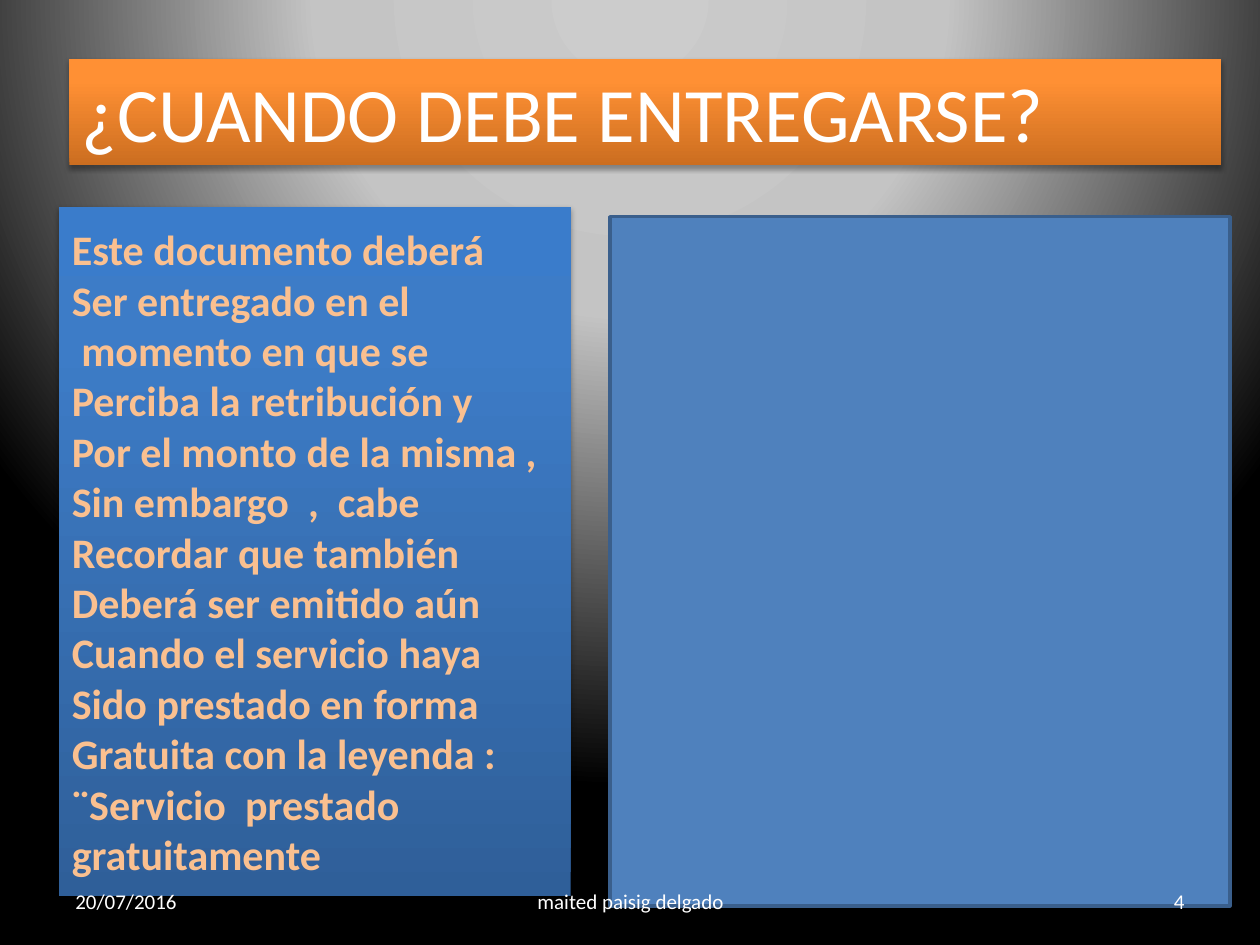
from dataclasses import dataclass

from lxml.etree import SubElement
from pptx import Presentation
from pptx.dml.color import RGBColor
from pptx.enum.shapes import MSO_SHAPE
from pptx.enum.text import MSO_ANCHOR, MSO_AUTO_SIZE, PP_ALIGN
from pptx.oxml.ns import qn
from pptx.util import Inches, Pt

WHITE = RGBColor(0xFF, 0xFF, 0xFF)
BLACK = RGBColor(0x00, 0x00, 0x00)
PEACH = RGBColor(0xFA, 0xC0, 0x90)
PANEL_BLUE = RGBColor(0x4F, 0x81, 0xBD)
PANEL_EDGE = RGBColor(0x3A, 0x5F, 0x8C)

Stops = list[tuple[int, RGBColor]]
BACKDROP: Stops = [(0, RGBColor(0xCC, 0xCC, 0xCC)),
                   (40, RGBColor(0xC4, 0xC4, 0xC4)), (100, BLACK)]
ORANGE: Stops = [(0, RGBColor(0xCC, 0x6E, 0x20)),
                 (80, RGBColor(0xFF, 0x90, 0x34)),
                 (100, RGBColor(0xFF, 0x91, 0x36))]
BLUE: Stops = [(0, RGBColor(0x2F, 0x5F, 0x99)),
               (80, RGBColor(0x3D, 0x7C, 0xC7)),
               (100, RGBColor(0x3A, 0x7C, 0xCB))]

DELIVERY_LINES = [
    "Este documento deberá",
    "Ser entregado en el",
    " momento en que se ",
    "Perciba la retribución y ",
    "Por el monto de la misma , ",
    "Sin embargo  ,  cabe",
    "Recordar que también",
    "Deberá ser emitido aún",
    "Cuando el servicio haya",
    "Sido prestado en forma",
    "Gratuita con la leyenda :",
    "¨Servicio  prestado ",
    "gratuitamente",
]


@dataclass
class FooterItem:
    text: str
    left: float
    width: float
    align: PP_ALIGN


FOOTER = [
    FooterItem("20/07/2016", 0.5, 2.33, PP_ALIGN.LEFT),
    FooterItem("maited paisig delgado", 3.42, 3.17, PP_ALIGN.CENTER),
    FooterItem("4", 7.17, 2.33, PP_ALIGN.RIGHT),
]


def place(shape, left: float, top: float, width: float, height: float) -> None:
    shape.left, shape.top = Inches(left), Inches(top)
    shape.width, shape.height = Inches(width), Inches(height)


def add_color(parent, color: RGBColor):
    return SubElement(parent, qn("a:srgbClr"), val=str(color))


def set_gradient(fill, properties, stops: Stops, radial: bool = False) -> None:
    """Turn the fill into a gradient: radial, or linear from bottom to top."""
    fill.solid()
    gradient = properties.makeelement(qn("a:gradFill"), {"rotWithShape": "1"})
    properties.replace(properties.find(qn("a:solidFill")), gradient)
    stop_list = SubElement(gradient, qn("a:gsLst"))
    for percent, color in stops:
        add_color(SubElement(stop_list, qn("a:gs"), pos=str(percent * 1000)), color)
    if radial:
        circle = SubElement(gradient, qn("a:path"), path="circle")
        SubElement(circle, qn("a:fillToRect"),
                   l="50000", t="-80000", r="50000", b="180000")
    else:
        SubElement(gradient, qn("a:lin"), ang=str(270 * 60000), scaled="0")


def add_shadow(shape) -> None:
    shape.shadow.inherit = False
    effects = shape.element.spPr.find(qn("a:effectLst"))
    shadow = SubElement(effects, qn("a:outerShdw"), blurRad=str(Pt(3.1)),
                        dist=str(Pt(1.8)), dir=str(90 * 60000), rotWithShape="0")
    SubElement(add_color(shadow, BLACK), qn("a:alpha"), val="35000")


def write_text(shape, lines: list[str], *, size: float, color: RGBColor = WHITE,
               bold: bool = False, align: PP_ALIGN = PP_ALIGN.LEFT,
               anchor: MSO_ANCHOR = MSO_ANCHOR.MIDDLE) -> None:
    frame = shape.text_frame
    frame.word_wrap = True
    frame.auto_size = MSO_AUTO_SIZE.NONE
    frame.vertical_anchor = anchor
    frame.text = "\n".join(lines)
    for paragraph in frame.paragraphs:
        paragraph.alignment = align
        paragraph.space_before = Pt(0)
        for run in paragraph.runs:
            font = run.font
            font.name, font.size, font.bold = "Calibri", Pt(size), bold
            font.color.rgb = color


def remove_bullets(shape) -> None:
    for paragraph in shape.text_frame.paragraphs:
        properties = paragraph._p.get_or_add_pPr()
        properties.set("marL", "0")
        properties.set("indent", "0")
        SubElement(properties, qn("a:buNone"))


def main() -> None:
    presentation = Presentation()
    presentation.slide_width, presentation.slide_height = Inches(10), Inches(7.5)
    slide = presentation.slides.add_slide(presentation.slide_layouts[1])

    # Background
    backdrop = slide.background.fill
    backdrop.solid()
    set_gradient(backdrop, slide.element.find(".//" + qn("p:bgPr")),
                 BACKDROP, radial=True)

    # Title banner
    title = slide.shapes.title
    place(title, 0.55, 0.47, 9.14, 0.84)
    set_gradient(title.fill, title.element.spPr, ORANGE)
    add_shadow(title)
    write_text(title, ["¿CUANDO DEBE ENTREGARSE?"], size=44, anchor=MSO_ANCHOR.TOP)

    # Delivery rules
    rules = slide.placeholders[1]
    place(rules, 0.47, 1.64, 4.06, 5.47)
    set_gradient(rules.fill, rules.element.spPr, BLUE)
    add_shadow(rules)
    write_text(rules, DELIVERY_LINES, size=24, color=PEACH, bold=True,
               align=PP_ALIGN.JUSTIFY)
    remove_bullets(rules)

    # Plain panel on the right
    panel = slide.shapes.add_shape(MSO_SHAPE.RECTANGLE, Inches(4.84), Inches(1.72),
                                   Inches(4.92), Inches(5.47))
    panel.shadow.inherit = False
    panel.fill.solid()
    panel.fill.fore_color.rgb = PANEL_BLUE
    panel.line.color.rgb = PANEL_EDGE
    panel.line.width = Pt(2)

    # Footer
    for item in FOOTER:
        box = slide.shapes.add_textbox(Inches(item.left), Inches(6.95),
                                       Inches(item.width), Inches(0.4))
        write_text(box, [item.text], size=12, align=item.align)

    presentation.save("out.pptx")


if __name__ == "__main__":
    main()
